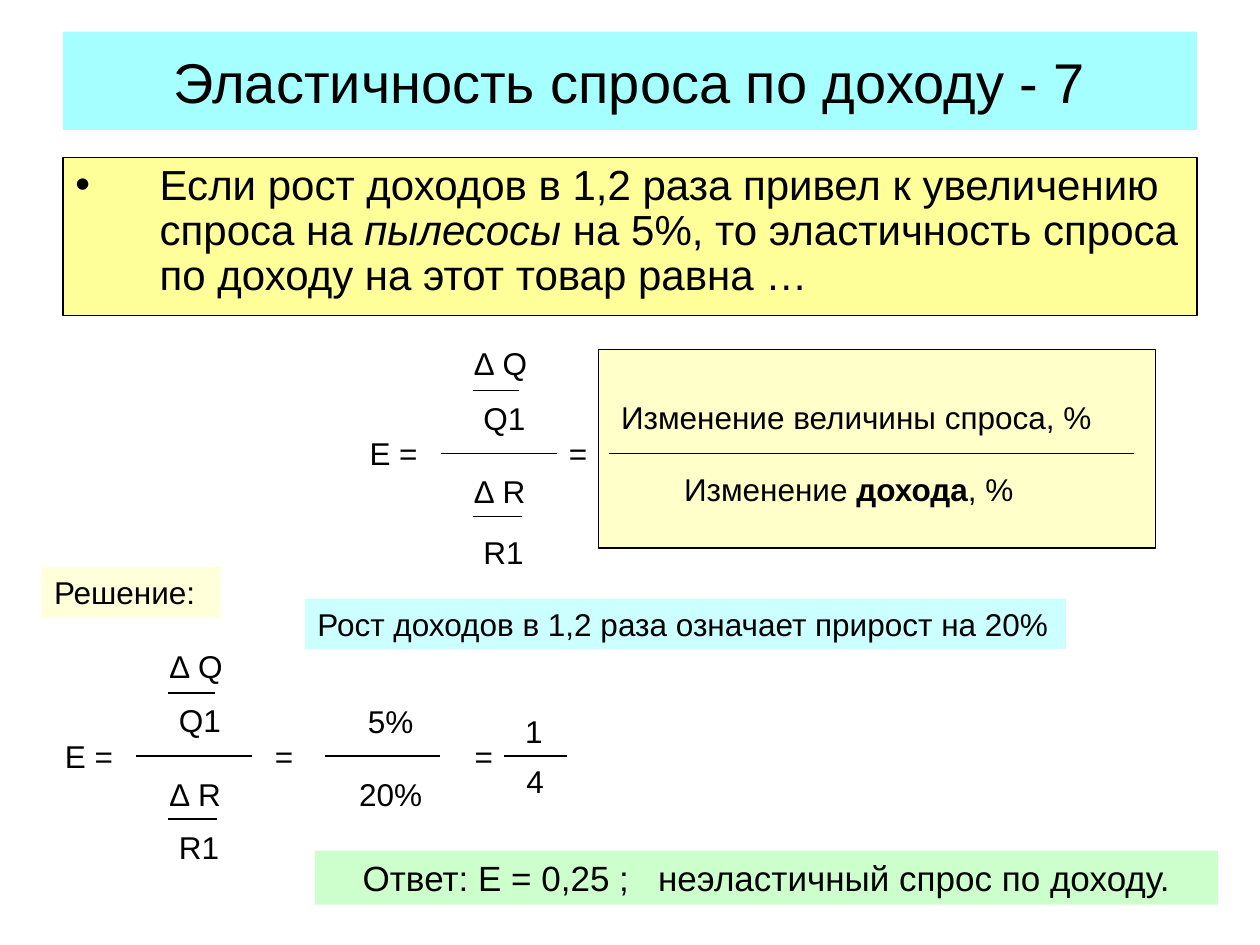
from dataclasses import dataclass

from lxml import etree
from pptx import Presentation
from pptx.dml.color import RGBColor
from pptx.enum import shapes, text
from pptx.oxml.ns import qn
from pptx.util import Cm, Pt

FONT = "Arial"
BLACK = "000000"
ROW = 1.02  # height of one line of formula text, cm


@dataclass
class Label:
    words: str
    left: float
    top: float
    width: float
    bold: str = ""  # the word set in bold


@dataclass
class Panel:
    left: float
    top: float
    width: float
    height: float
    fill: str
    alpha: int = 100
    outlined: bool = False
    words: str = ""
    size: int = 18
    centred: bool = False
    wrap: bool = True


@dataclass
class Ratio:
    """Relative change of Q over relative change of R, with its equals signs."""
    left: float
    bar: float  # height of the main bar
    last_row: float  # offset of R1 below the main bar
    equals: float  # offset of the equals sign that follows


def colour(hex_text: str) -> RGBColor:
    return RGBColor.from_string(hex_text)


def set_fill(shape, hex_text: str, alpha: int = 100) -> None:
    shape.fill.solid()
    shape.fill.fore_color.rgb = colour(hex_text)
    if alpha < 100:
        value = next(shape._element.spPr.iter(qn("a:srgbClr")))
        etree.SubElement(value, qn("a:alpha"), val=str(alpha * 1000))


def set_line(shape) -> None:
    shape.line.color.rgb = colour(BLACK)
    shape.line.width = Pt(0.75)


def style(span, size: int, bold: bool = False, italic: bool = False) -> None:
    span.font.name = FONT
    span.font.size = Pt(size)
    span.font.bold = bold
    span.font.italic = italic
    span.font.color.rgb = colour(BLACK)


def write(para, words: str, size: int, bold: str = "", italic: str = "") -> None:
    """Fill a paragraph, setting one marked part in bold or italic."""
    marked = bold or italic
    parts = words.partition(marked) if marked else (words,)
    for part in parts:
        span = para.add_run()
        span.text = part
        special = part == marked
        style(span, size, special and bool(bold), special and bool(italic))


def draw_label(slide, label: Label) -> None:
    box = slide.shapes.add_textbox(
        Cm(label.left), Cm(label.top), Cm(label.width), Cm(ROW))
    box.text_frame.word_wrap = True
    box.text_frame.auto_size = text.MSO_AUTO_SIZE.SHAPE_TO_FIT_TEXT
    write(box.text_frame.paragraphs[0], label.words, 18, label.bold)


def draw_panel(slide, panel: Panel):
    box = slide.shapes.add_shape(
        shapes.MSO_SHAPE.RECTANGLE, Cm(panel.left), Cm(panel.top),
        Cm(panel.width), Cm(panel.height))
    box.shadow.inherit = False
    set_fill(box, panel.fill, panel.alpha)
    if panel.outlined:
        set_line(box)
    else:
        box.line.fill.background()
    frame = box.text_frame
    frame.word_wrap = panel.wrap
    frame.vertical_anchor = text.MSO_ANCHOR.TOP
    para = frame.paragraphs[0]
    para.alignment = text.PP_ALIGN.CENTER if panel.centred else text.PP_ALIGN.LEFT
    if panel.words:
        frame.auto_size = text.MSO_AUTO_SIZE.SHAPE_TO_FIT_TEXT
        write(para, panel.words, panel.size)
    return box


def draw_bar(slide, left: float, y: float, width: float) -> None:
    bar = slide.shapes.add_connector(
        shapes.MSO_CONNECTOR.STRAIGHT, Cm(left), Cm(y), Cm(left + width), Cm(y))
    set_line(bar)
    etree.SubElement(bar._element.spPr, qn("a:effectLst"))


def draw_ratio(slide, ratio: Ratio) -> None:
    left, bar = ratio.left, ratio.bar
    rows = (("∆ Q", -2.33), (" Q1", -1.23), ("∆ R", 0.25), (" R1", ratio.last_row))
    for words, offset in rows:
        draw_label(slide, Label(words, left, bar + offset, 1.9))
    draw_label(slide, Label("Е =", left - 2.12, bar - ROW / 2, 1.7))
    draw_label(slide, Label("=", left + ratio.equals, bar - ROW / 2, 0.85))
    draw_bar(slide, left + 0.21, bar - 1.27, 0.94)
    draw_bar(slide, left + 0.21, bar + 1.27, 0.99)
    draw_bar(slide, left - 0.43, bar, 2.33)


def draw_title(slide) -> None:
    title = slide.shapes.title
    title.left, title.top, title.width, title.height = (
        Cm(1.27), Cm(0.64), Cm(22.86), Cm(1.98))
    set_fill(title, "00FFFF", 35)
    frame = title.text_frame
    frame.text = "Эластичность спроса по доходу - 7"
    frame.auto_size = text.MSO_AUTO_SIZE.NONE
    frame.vertical_anchor = text.MSO_ANCHOR.MIDDLE
    frame.paragraphs[0].alignment = text.PP_ALIGN.CENTER
    style(frame.paragraphs[0].runs[0], 32)


def draw_question(slide) -> None:
    box = draw_panel(slide, Panel(1.27, 3.18, 22.86, 3.18, "FFFF99", outlined=True))
    para = box.text_frame.paragraphs[0]
    para.line_spacing = 0.9
    write(para, "Если рост доходов в 1,2 раза привел к увеличению спроса на пылесосы "
          "на 5%, то эластичность спроса по доходу на этот товар равна …",
          24, italic="пылесосы ")
    # Hanging bullet
    properties = para._p.get_or_add_pPr()
    properties.set("marL", str(Cm(1.7)))
    properties.set("indent", str(-Cm(1.7)))
    etree.SubElement(properties, qn("a:buFont"), typeface=FONT)
    etree.SubElement(properties, qn("a:buChar"), char="•")


PANELS = [
    Panel(12.07, 7.04, 11.22, 4.01, "FFFF99", 53, outlined=True),
    Panel(0.84, 11.43, 3.61, ROW, "FFFF99", 37, words="Решение:"),
    Panel(6.15, 12.07, 15.34, ROW, "CCFFFF", wrap=False,
          words="Рост доходов в 1,2 раза означает прирост на 20%"),
    Panel(6.35, 17.15, 18.21, 1.09, "CCFFCC", size=20, centred=True,
          words="Ответ: Е = 0,25 ;   неэластичный спрос по доходу."),
]
RATIOS = [Ratio(9.32, 9.14, 1.48, 1.9), Ratio(3.18, 15.24, 1.32, 2.11)]
LABELS = [
    Label("Изменение величины спроса, %", 12.27, 7.9, 10.36),
    Label("Изменение дохода, %", 13.54, 9.35, 7.42, bold="дохода"),
    Label(" 5%", 6.99, 14.02, 1.7),
    Label("20%", 6.99, 15.49, 1.9),
    Label("=", 9.32, 14.73, 0.85),
    Label(" 1", 10.16, 14.22, 1.07),
    Label("4", 10.36, 15.24, 1.27),
]
# Left, height and width of the remaining fraction bars
BARS = [(12.27, 9.14, 10.59), (6.55, 15.24, 2.33), (10.16, 15.24, 1.27)]


def main() -> None:
    deck = Presentation()
    deck.slide_width, deck.slide_height = Cm(25.4), Cm(19.05)
    slide = deck.slides.add_slide(deck.slide_layouts[5])
    draw_title(slide)
    draw_question(slide)
    for panel in PANELS:
        draw_panel(slide, panel)
    for ratio in RATIOS:
        draw_ratio(slide, ratio)
    for label in LABELS:
        draw_label(slide, label)
    for bar in BARS:
        draw_bar(slide, *bar)
    deck.save("out.pptx")


if __name__ == "__main__":
    main()
